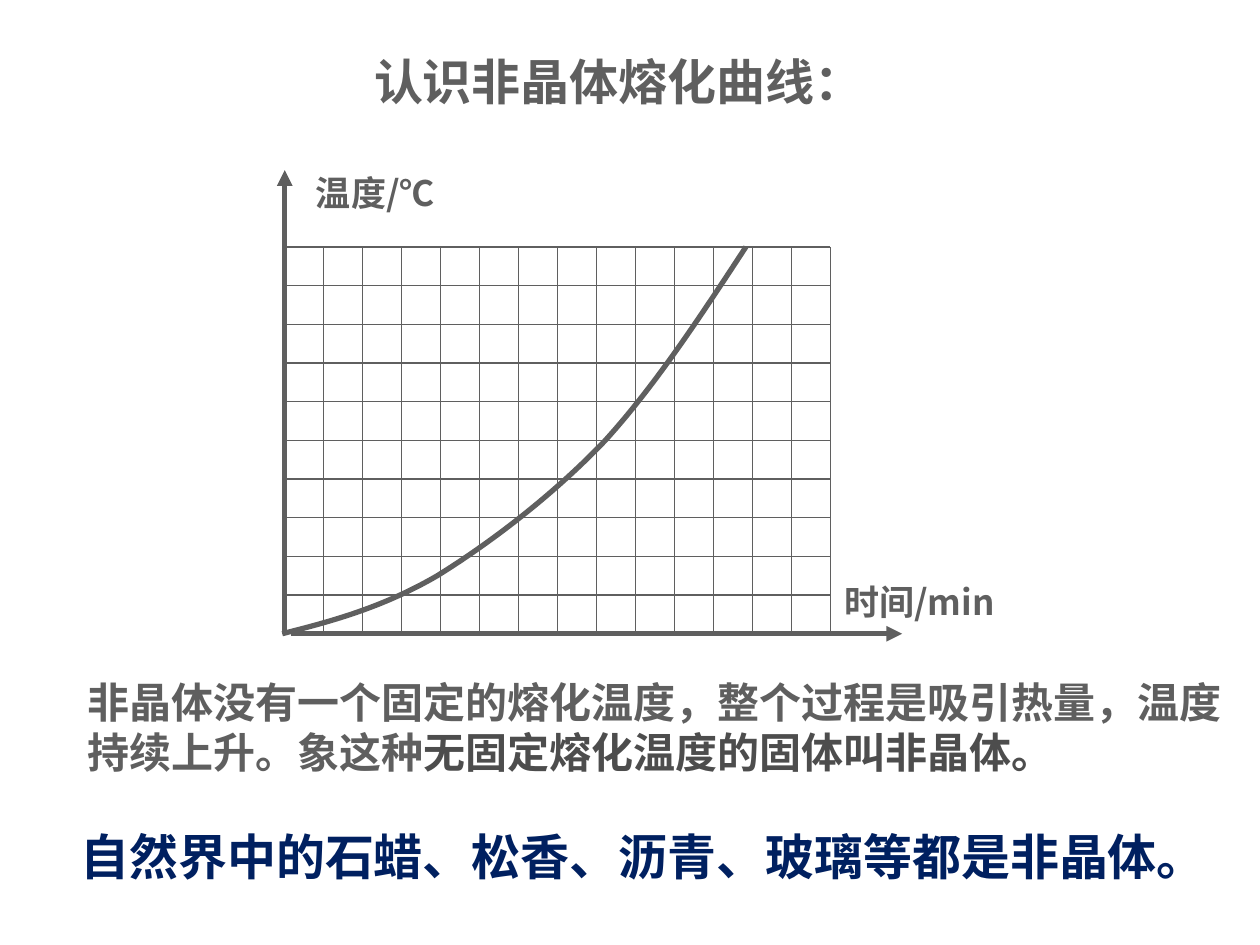
from lxml.etree import SubElement
from pptx import Presentation
from pptx.dml.color import RGBColor
from pptx.enum.shapes import MSO_CONNECTOR
from pptx.enum.text import MSO_AUTO_SIZE
from pptx.oxml.ns import qn
from pptx.util import Inches, Pt

GRAY = RGBColor(0x5F, 0x5F, 0x5F)
DARK_GRAY = RGBColor(0x4D, 0x4D, 0x4D)
NAVY = RGBColor(0x00, 0x20, 0x60)
FONT = "Noto Sans CJK SC"
COLUMNS, ROWS = 14, 10
CURVE_START = (-0.02, 3.07)
CURVE_SEGMENTS = [
    [(0.38, 2.97), (0.78, 2.86), (1.21, 2.61)],
    [(1.63, 2.35), (2.13, 1.97), (2.54, 1.54)],
    [(2.94, 1.10), (3.30, 0.55), (3.66, 0)],
]


def add_text(slide, box, size, runs, wrap=True):
    """Place bold text, given as (text, colour) runs, in a box."""
    shape = slide.shapes.add_textbox(*map(Inches, box))
    frame = shape.text_frame
    frame.word_wrap = wrap
    frame.auto_size = MSO_AUTO_SIZE.NONE
    paragraph = frame.paragraphs[0]
    for text, color in runs:
        run = paragraph.add_run()
        run.text = text
        run.font.size = Pt(size)
        run.font.bold = True
        run.font.color.rgb = color
        run.font.name = FONT
        SubElement(run.font._element, qn("a:ea"), typeface=FONT)


def add_line(slide, start, end, width=0.75, arrow=False):
    """Draw a straight gray line, with an arrowhead at its end if asked."""
    connector = slide.shapes.add_connector(
        MSO_CONNECTOR.STRAIGHT, *map(Inches, (*start, *end)))
    connector.line.color.rgb = GRAY
    connector.line.width = Pt(width)
    if arrow:
        SubElement(connector.line._get_or_add_ln(), qn("a:tailEnd"), type="triangle")
    SubElement(connector._element.spPr, qn("a:effectLst"))


def add_curve(slide, left, top):
    """Draw the melting curve as cubic segments from the grid's top left."""
    def place(point):
        return Inches(left + point[0]), Inches(top + point[1])

    builder = slide.shapes.build_freeform(*place(CURVE_START))
    builder.add_line_segments([place(points[-1]) for points in CURVE_SEGMENTS], close=False)
    shape = builder.convert_to_shape()
    shape.shadow.inherit = False
    shape.fill.background()
    shape.line.color.rgb = GRAY
    shape.line.width = Pt(3)
    segments = list(shape._element.iter(qn("a:lnTo")))
    for segment, points in zip(segments, CURVE_SEGMENTS):
        segment.tag = qn("a:cubicBezTo")
        segment.remove(segment[0])
        for x, y in map(place, points):
            SubElement(segment, qn("a:pt"), x=str(x - shape.left), y=str(y - shape.top))


def add_melting_graph(slide, left, top, width, height):
    """Draw the grid in the given box, with its axes, curve and labels."""
    right, bottom = left + width, top + height
    for row in range(ROWS):
        y = top + row * height / ROWS
        add_line(slide, (left, y), (right, y))
    for column in range(1, COLUMNS + 1):
        x = left + column * width / COLUMNS
        add_line(slide, (x, top), (x, bottom))
    add_line(slide, (left, bottom), (left, top - 0.61), 3, True)
    add_curve(slide, left, top)
    add_line(slide, (left + 0.05, bottom), (right + 0.57, bottom), 3, True)
    add_text(slide, (right + 0.01, bottom - 0.47, 1.69, 0.47), 20, [("时间/min", GRAY)])
    add_text(slide, (left + 0.15, top - 0.65, 1.54, 0.47), 20, [("温度/℃", GRAY)])


def main():
    """Build the slide and save it."""
    presentation = Presentation()
    presentation.slide_width = Inches(10)
    presentation.slide_height = Inches(7.5)
    slide = presentation.slides.add_slide(presentation.slide_layouts[6])
    add_melting_graph(slide, 2.26, 1.96, 4.33, 3.07)
    add_text(slide, (2.87, 0.36, 3.82, 0.58), 28, [("认识非晶体熔化曲线：", GRAY)])
    add_text(slide, (0.6, 5.32, 9.4, 0.91), 24, [
        ("非晶体没有一个固定的熔化温度，整个过程是吸引热量，温度持续上升。象这种", GRAY),
        ("无固定熔化温度的固体叫非晶体。", DARK_GRAY),
    ])
    add_text(slide, (0.54, 6.51, 9.47, 0.57), 28,
             [("自然界中的石蜡、松香、沥青、玻璃等都是非晶体。", NAVY)], wrap=False)
    presentation.save("out.pptx")


if __name__ == "__main__":
    main()
